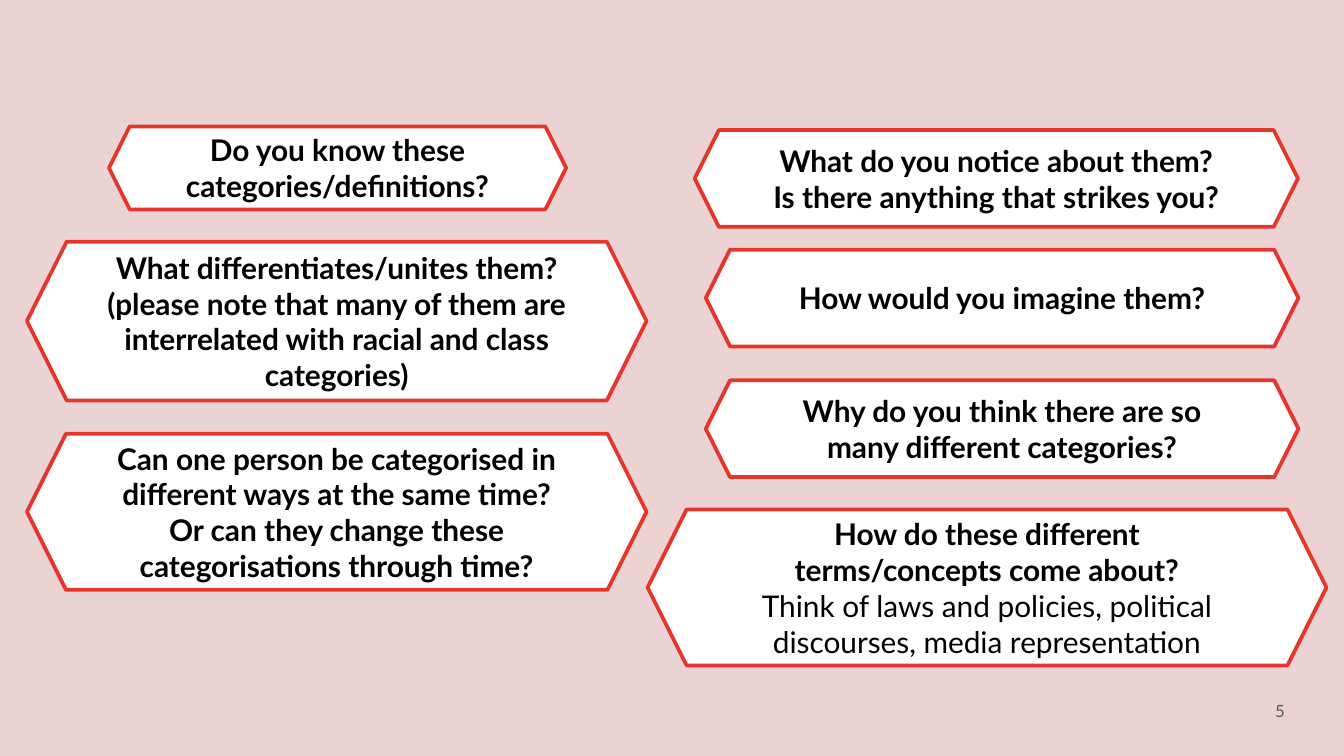
from pptx import Presentation
from pptx.dml.color import RGBColor
from pptx.enum.shapes import MSO_SHAPE
from pptx.enum.text import MSO_ANCHOR, PP_ALIGN
from pptx.util import Cm, Pt

BACKGROUND = RGBColor(0xEB, 0xD3, 0xD3)
RED = RGBColor(0xE5, 0x36, 0x2B)
WHITE = RGBColor(0xFF, 0xFF, 0xFF)
BLACK = RGBColor(0x00, 0x00, 0x00)
GREY = RGBColor(0x59, 0x59, 0x59)
FONT = "Lato"

# Left, top, width and height in cm, question, optional hint
QUESTIONS = [
    (2.06, 2.39, 8.64, 1.57, "Do you know these categories/definitions?", None),
    (13.13, 2.46, 11.4, 1.83,
     "What do you notice about them? Is there anything that strikes you?", None),
    (0.51, 4.57, 11.71, 3.0,
     "What differentiates/unites them? (please note that many of them are "
     "interrelated with racial and class categories)", None),
    (13.34, 4.72, 11.2, 1.83, "How would you imagine them?", None),
    (13.34, 7.19, 11.2, 1.83,
     "Why do you think there are so many different categories?", None),
    (0.51, 8.2, 11.71, 2.95,
     "Can one person be categorised in different ways at the same time? "
     "Or can they change these categorisations through time?", None),
    (12.24, 9.63, 12.83, 2.95,
     "How do these different terms/concepts come about?",
     "Think of laws and policies, political discourses, media representation"),
]


def set_font(paragraph, size, color):
    paragraph.font.name = FONT
    paragraph.font.size = Pt(size)
    paragraph.font.color.rgb = color


def add_run(paragraph, text, bold):
    run = paragraph.add_run()
    run.text = text
    run.font.bold = bold


def add_question(slide, left, top, width, height, question, hint):
    shape = slide.shapes.add_shape(
        MSO_SHAPE.HEXAGON, Cm(left), Cm(top), Cm(width), Cm(height))
    shape.shadow.inherit = False
    shape.adjustments[0] = 0.25
    shape.fill.solid()
    shape.fill.fore_color.rgb = WHITE
    shape.line.color.rgb = RED
    shape.line.width = Pt(2)

    text_frame = shape.text_frame
    text_frame.word_wrap = True
    text_frame.vertical_anchor = MSO_ANCHOR.MIDDLE
    paragraph = text_frame.paragraphs[0]
    paragraph.alignment = PP_ALIGN.CENTER
    set_font(paragraph, 16, BLACK)
    add_run(paragraph, question, True)
    if hint:
        paragraph.add_line_break()
        add_run(paragraph, hint, False)


def add_page_number(slide, number):
    text_box = slide.shapes.add_textbox(Cm(23.01), Cm(12.9), Cm(1.52), Cm(1.09))
    text_frame = text_box.text_frame
    text_frame.word_wrap = True
    text_frame.vertical_anchor = MSO_ANCHOR.MIDDLE
    text_frame.margin_top = text_frame.margin_bottom = Cm(0.25)
    paragraph = text_frame.paragraphs[0]
    paragraph.text = str(number)
    paragraph.alignment = PP_ALIGN.RIGHT
    set_font(paragraph, 9, GREY)


def main():
    presentation = Presentation()
    presentation.slide_width = Cm(25.4)
    presentation.slide_height = Cm(14.29)
    slide = presentation.slides.add_slide(presentation.slide_layouts[6])
    slide.background.fill.solid()
    slide.background.fill.fore_color.rgb = BACKGROUND

    add_page_number(slide, 5)
    for question in QUESTIONS:
        add_question(slide, *question)
    presentation.save("out.pptx")


if __name__ == "__main__":
    main()
